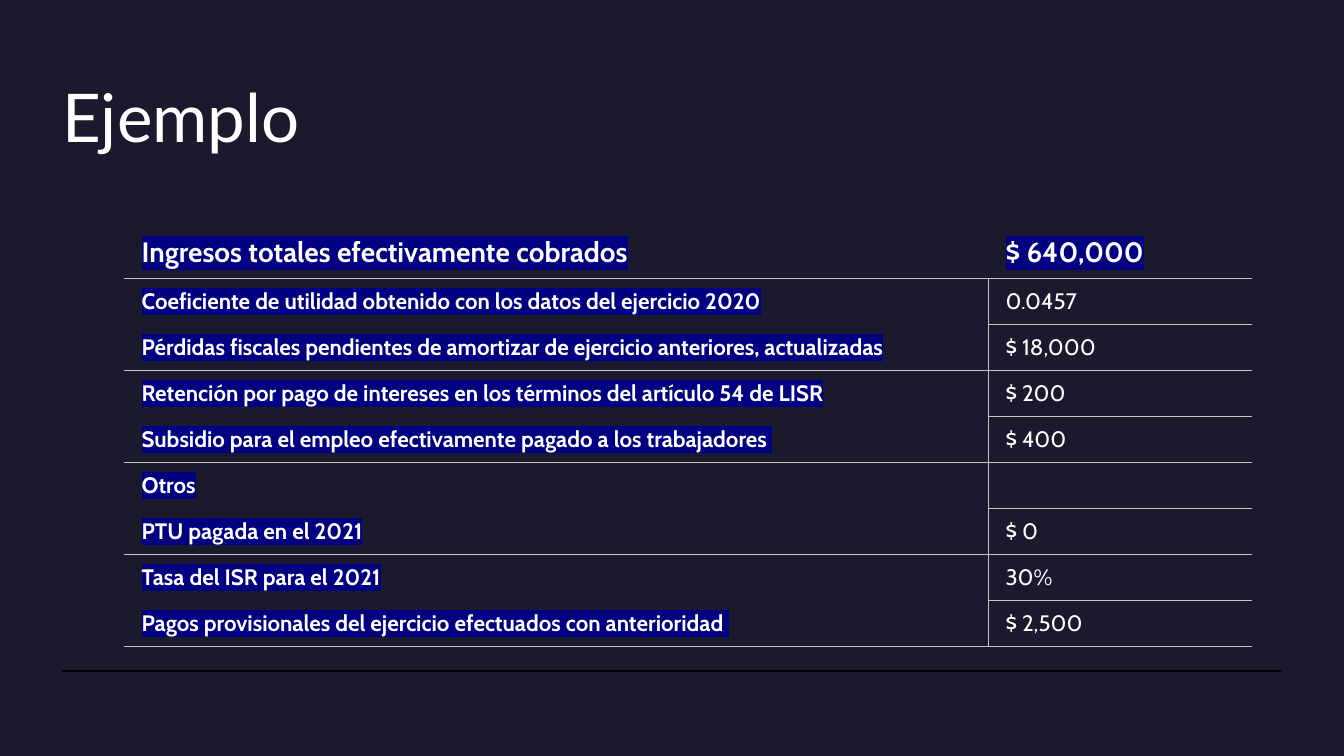
from lxml import etree
from pptx import Presentation
from pptx import util as u
from pptx.dml.color import RGBColor
from pptx.enum import shapes, text
from pptx.oxml.ns import qn

NIGHT = RGBColor(0x1B, 0x19, 0x2E)
WHITE = RGBColor(0xFF, 0xFF, 0xFF)
BLACK = RGBColor(0x00, 0x00, 0x00)
NAVY = RGBColor(0x00, 0x00, 0x80)
RULE = RGBColor(0xC7, 0xC6, 0xC1)

HEADING = ("Ingresos totales efectivamente cobrados", "$ 640,000")
CONCEPTS = [
    ("Coeficiente de utilidad obtenido con los datos del ejercicio 2020", "0.0457"),
    ("Pérdidas fiscales pendientes de amortizar de ejercicio anteriores, actualizadas", "$ 18,000"),
    ("Retención por pago de intereses en los términos del artículo 54 de LISR", "$ 200"),
    ("Subsidio para el empleo efectivamente pagado a los trabajadores ", "$ 400"),
    ("Otros", ""),
    ("PTU pagada en el 2021", "$ 0"),
    ("Tasa del ISR para el 2021", "30%"),
    ("Pagos provisionales del ejercicio efectuados con anterioridad ", "$ 2,500"),
]


def add_run(para, words, font, size, bold=False, highlighted=False):
    span = para.add_run()
    span.text = words
    span.font.name = font
    span.font.size = u.Pt(size)
    span.font.bold = bold
    span.font.color.rgb = WHITE
    if highlighted:
        marker = etree.Element(qn("a:highlight"))
        etree.SubElement(marker, qn("a:srgbClr"), val=str(NAVY))
        span._r.get_or_add_rPr().find(qn("a:solidFill")).addnext(marker)


def add_backdrop(page, width, height):
    page.background.fill.solid()
    page.background.fill.fore_color.rgb = NIGHT
    box = page.shapes.add_shape(shapes.MSO_SHAPE.RECTANGLE, 0, 0, width, height)
    box.shadow.inherit = False
    box.fill.solid()
    box.fill.fore_color.rgb = NIGHT
    box.line.fill.background()
    page.shapes._spTree.insert(2, box._element)


def set_title(page, words):
    title = page.shapes.title
    title.left, title.top = u.Cm(1.57), u.Cm(2.13)
    title.width, title.height = u.Cm(20.37), u.Cm(3.53)
    frame = title.text_frame
    frame.margin_left = frame.margin_right = frame.margin_top = frame.margin_bottom = 0
    frame.vertical_anchor = text.MSO_ANCHOR.TOP
    frame.word_wrap = True
    frame.auto_size = text.MSO_AUTO_SIZE.NONE
    para = frame.paragraphs[0]
    para.alignment = text.PP_ALIGN.LEFT
    para.line_spacing = 0.9
    add_run(para, words, "Lato", 48)


def add_footer_line(page):
    y = u.Cm(16.91)
    line = page.shapes.add_connector(
        shapes.MSO_CONNECTOR.STRAIGHT, u.Cm(1.57), y, u.Cm(32.28), y)
    line.line.color.rgb = BLACK
    line.line.width = u.Pt(1)
    etree.SubElement(line._element.spPr, qn("a:effectLst"))


def set_borders(cell, sides):
    properties = cell._tc.get_or_add_tcPr()
    for index, side in enumerate("LRTB"):
        border = etree.Element(qn(f"a:ln{side}"), w=str(u.Pt(0.75)))
        if side in sides:
            fill = etree.SubElement(border, qn("a:solidFill"))
            etree.SubElement(fill, qn("a:srgbClr"), val=str(RULE))
        else:
            etree.SubElement(border, qn("a:noFill"))
        properties.insert(index, border)


def fill_cell(cell, words, size, strong, sides):
    cell.fill.background()
    cell.margin_left, cell.margin_right = u.Cm(0.44), u.Cm(0.33)
    cell.margin_top = cell.margin_bottom = u.Cm(0.2)
    para = cell.text_frame.paragraphs[0]
    para.line_spacing = 1.07
    para.space_after = u.Pt(8)
    add_run(para, words, "Cabin", size, strong, strong)
    set_borders(cell, sides)


def add_concept_table(page):
    rows = len(CONCEPTS) + 1
    table = page.shapes.add_table(
        rows, 2, u.Cm(3.13), u.Cm(5.66), u.Cm(28.42), u.Cm(10.63)).table
    table.first_row = table.horz_banding = False
    table.columns[0].width, table.columns[1].width = u.Cm(21.77), u.Cm(6.65)

    table.rows[0].height = u.Cm(1.35)
    for column, words in enumerate(HEADING):
        cell = table.cell(0, column)
        cell.vertical_anchor = text.MSO_ANCHOR.MIDDLE
        fill_cell(cell, words, 20, True, "B")

    for row, (concept, amount) in enumerate(CONCEPTS, 1):
        table.rows[row].height = u.Cm(1.16)
        fill_cell(table.cell(row, 0), concept, 16, True, "RT" if row % 2 else "RB")
        fill_cell(table.cell(row, 1), amount, 16, False, "LTB")


def main():
    deck = Presentation()
    deck.slide_width, deck.slide_height = u.Cm(33.87), u.Cm(19.05)
    page = deck.slides.add_slide(deck.slide_layouts[5])
    add_backdrop(page, deck.slide_width, deck.slide_height)
    set_title(page, "Ejemplo")
    add_footer_line(page)
    add_concept_table(page)
    deck.save("out.pptx")


if __name__ == "__main__":
    main()
